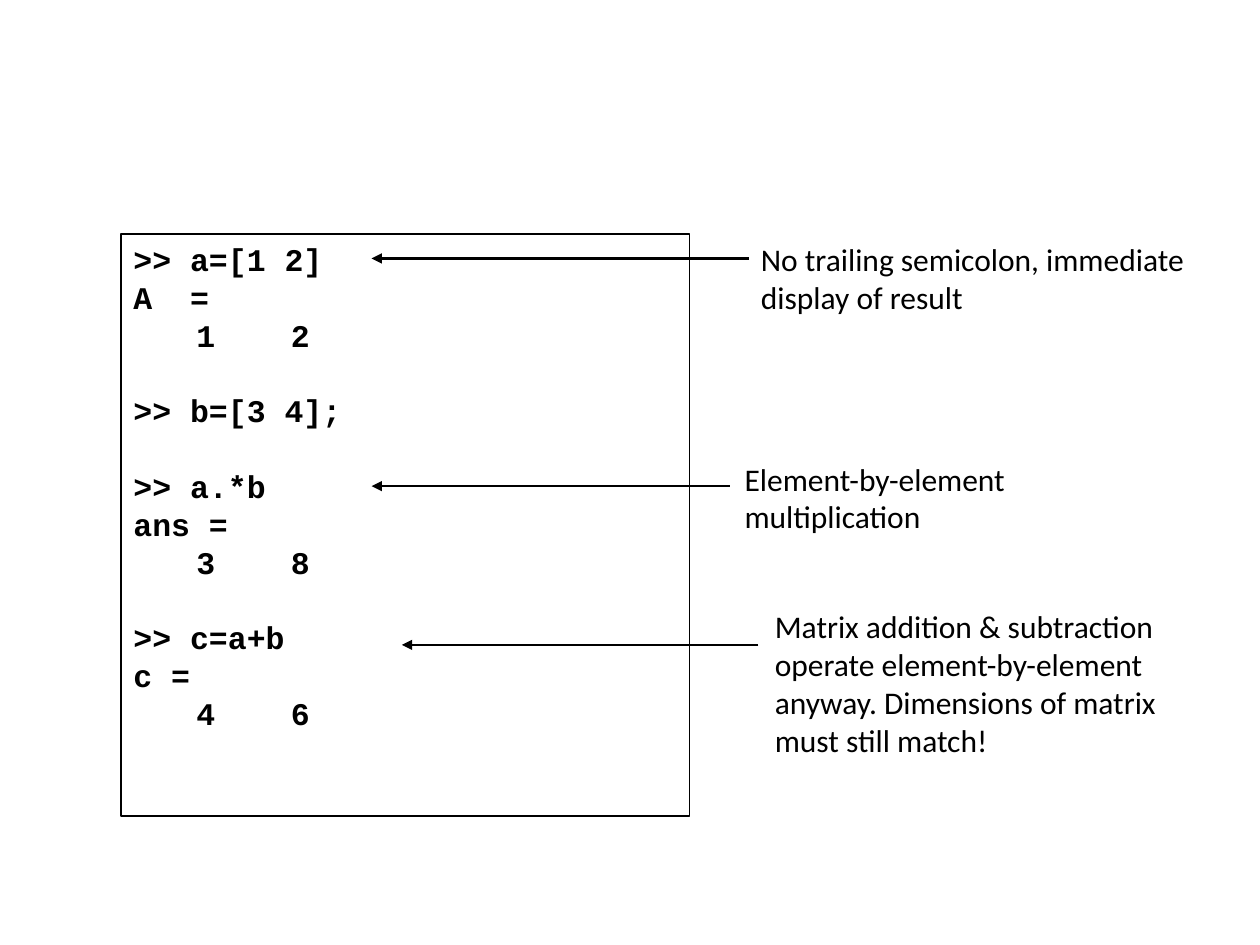
from lxml.etree import SubElement
from pptx import Presentation
from pptx.dml.color import RGBColor
from pptx.enum.shapes import MSO_CONNECTOR, MSO_SHAPE
from pptx.enum.text import MSO_ANCHOR, MSO_AUTO_SIZE, PP_ALIGN
from pptx.oxml.ns import qn
from pptx.util import Cm, Pt

BLACK, WHITE = "000000", "FFFFFF"
LINE_HEIGHT = Pt(21.6)

# Each block of console lines is set apart by one line of space.
CODE_BLOCKS = [
    [">> a=[1 2]", "A  =", "\t1    2"],
    [">> b=[3 4];"],
    [">> a.*b", "ans =", "\t3    8"],
    [">> c=a+b", "c =", "\t4    6"],
]
CODE_BOX = (2.44, 4.72, 11.46, 11.73)
CODE_FONT = {"name": "Courier New", "size": Pt(18), "bold": True}
NOTE_FONT = {"name": "Calibri", "size": Pt(18), "bold": False}

# Text, box (left, top, width, height), arrow (start x, end x, y), in cm
NOTES = [
    ("No trailing semicolon, immediate display of result",
     (15.09, 4.72, 9.6, 1.78), (15.09, 7.49, 5.21)),
    ("Element-by-element multiplication",
     (14.76, 9.14, 8.74, 1.78), (14.71, 7.49, 9.8)),
    ("Matrix addition & subtraction operate element-by-element anyway. "
     "Dimensions of matrix must still match!",
     (15.37, 12.12, 8.74, 3.3), (15.29, 8.1, 13.0)),
]


def color(value):
    return RGBColor.from_string(value)


def write_blocks(shape, blocks, font_format):
    """Write one paragraph per line, with a line of space between blocks."""
    frame = shape.text_frame
    frame.word_wrap = True
    frame.auto_size = MSO_AUTO_SIZE.NONE
    frame.vertical_anchor = MSO_ANCHOR.TOP
    lines = [(line, block_index > 0 and line_index == 0)
             for block_index, block in enumerate(blocks)
             for line_index, line in enumerate(block)]
    for index, (line, starts_block) in enumerate(lines):
        paragraph = frame.add_paragraph() if index else frame.paragraphs[0]
        paragraph.alignment = PP_ALIGN.LEFT
        paragraph.line_spacing = LINE_HEIGHT
        if starts_block:
            paragraph.space_before = LINE_HEIGHT
        run = paragraph.add_run()
        run.text = line
        for name, value in font_format.items():
            setattr(run.font, name, value)
        run.font.color.rgb = color(BLACK)


def add_code(slide):
    shape = slide.shapes.add_shape(MSO_SHAPE.RECTANGLE, *map(Cm, CODE_BOX))
    shape.shadow.inherit = False
    shape.fill.solid()
    shape.fill.fore_color.rgb = color(WHITE)
    shape.line.color.rgb = color(BLACK)
    shape.line.width = Pt(0.75)
    write_blocks(shape, CODE_BLOCKS, CODE_FONT)


def add_arrow(slide, start, end, y):
    arrow = slide.shapes.add_connector(
        MSO_CONNECTOR.STRAIGHT, Cm(start), Cm(y), Cm(end), Cm(y))
    arrow.line.color.rgb = color(BLACK)
    arrow.line.width = Pt(1.5)
    SubElement(arrow.line._get_or_add_ln(), qn("a:tailEnd"), type="triangle")
    SubElement(arrow._element.spPr, qn("a:effectLst"))


def main():
    presentation = Presentation()
    presentation.slide_width, presentation.slide_height = Cm(25.4), Cm(19.05)
    slide = presentation.slides.add_slide(presentation.slide_layouts[6])
    add_code(slide)
    for text, box, arrow in NOTES:
        write_blocks(slide.shapes.add_textbox(*map(Cm, box)), [[text]], NOTE_FONT)
        add_arrow(slide, *arrow)
    presentation.save("out.pptx")


if __name__ == "__main__":
    main()
